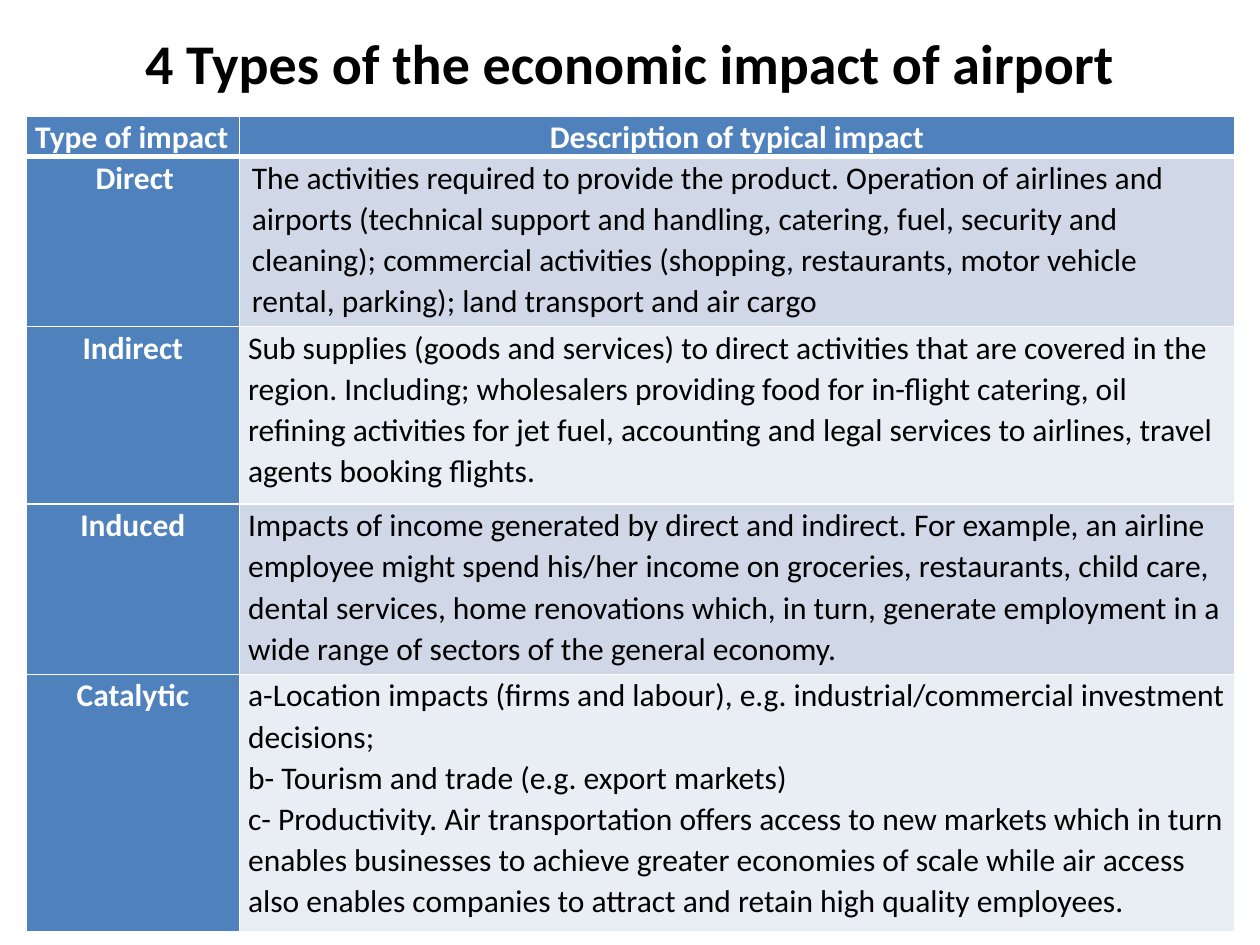
import pptx
import pptx.dml.color
import pptx.enum.text
import pptx.oxml
import pptx.oxml.ns
import pptx.util

Inches = pptx.util.Inches
Pt = pptx.util.Pt
ALIGN = pptx.enum.text.PP_ALIGN

# Content
TITLE = "4 Types of the economic impact of airport"
HEADER = ("Type of impact", "Description of typical impact")
IMPACTS = [
    ("Direct", [
        "The activities required to provide the product. Operation of airlines and airports "
        "(technical support and handling, catering, fuel, security and cleaning); commercial "
        "activities (shopping, restaurants, motor vehicle rental, parking); land transport "
        "and air cargo"]),
    ("Indirect", [
        "Sub supplies (goods and services) to direct activities that are covered in the region. "
        "Including; wholesalers providing food for in-flight catering, oil refining activities "
        "for jet fuel, accounting and legal services to airlines, travel agents booking flights."]),
    ("Induced", [
        "Impacts of income generated by direct and indirect. For example, an airline employee "
        "might spend his/her income on groceries, restaurants, child care, dental services, "
        "home renovations which, in turn, generate employment in a wide range of sectors of "
        "the general economy."]),
    ("Catalytic", [
        "a-Location impacts (firms and labour), e.g. industrial/commercial investment decisions;",
        "b- Tourism and trade (e.g. export markets)",
        "c- Productivity. Air transportation offers access to new markets which in turn enables "
        "businesses to achieve greater economies of scale while air access also enables "
        "companies to attract and retain high quality employees."]),
]

# Layout and look
COLUMN_WIDTHS = (1.69, 7.9)
ROW_HEIGHTS = (0.31, 1.35, 1.41, 1.35, 2.04)
THEME = {
    "font": "Calibri", "title_size": 32, "body_size": 18,
    "text": "000000", "light_text": "FFFFFF", "border": "FFFFFF",
    "accent": "4F81BD", "bands": ("D0D8E8", "E9EDF4"),
}


def color(name):
    return pptx.dml.color.RGBColor.from_string(name)


def add_span(para, text, size, ink, bold):
    span = para.add_run()
    span.text = text
    span.font.name = THEME["font"]
    span.font.size = Pt(size)
    span.font.bold = bold
    span.font.color.rgb = color(ink)


def set_borders(cell, bottom_width):
    properties = cell._tc.get_or_add_tcPr()
    sides = (("lnL", 1), ("lnR", 1), ("lnT", 1), ("lnB", bottom_width))
    for position, (side, width) in enumerate(sides):
        properties.insert(position, pptx.oxml.parse_xml(
            f'<a:{side} {pptx.oxml.ns.nsdecls("a")} w="{Pt(width)}"><a:solidFill>'
            f'<a:srgbClr val="{THEME["border"]}"/></a:solidFill></a:{side}>'))


def fill_cell(cell, texts, fill, ink, bold, align, space_after=10, indent=0, bottom_width=1):
    cell.margin_left = cell.margin_right = Inches(0.07)
    cell.margin_top = cell.margin_bottom = 0
    cell.fill.solid()
    cell.fill.fore_color.rgb = color(fill)
    set_borders(cell, bottom_width)
    for index, text in enumerate(texts):
        frame = cell.text_frame
        para = frame.add_paragraph() if index else frame.paragraphs[0]
        para.alignment = align
        para.line_spacing = 1.07
        para.space_after = Pt(space_after)
        if indent:
            para._p.get_or_add_pPr().set("marL", str(Inches(indent)))
        add_span(para, text, THEME["body_size"], ink, bold)


def add_title(page):
    box = page.shapes.add_textbox(Inches(0.5), Inches(0.08), Inches(9), Inches(0.83))
    frame = box.text_frame
    frame.word_wrap = True
    frame.vertical_anchor = pptx.enum.text.MSO_ANCHOR.MIDDLE
    para = frame.paragraphs[0]
    para.alignment = ALIGN.CENTER
    add_span(para, TITLE, THEME["title_size"], THEME["text"], True)


def add_impact_table(page):
    table = page.shapes.add_table(
        len(ROW_HEIGHTS), len(COLUMN_WIDTHS), Inches(0.21), Inches(0.92),
        Inches(sum(COLUMN_WIDTHS)), Inches(sum(ROW_HEIGHTS))).table
    for column, width in zip(table.columns, COLUMN_WIDTHS):
        column.width = Inches(width)
    for row, height in zip(table.rows, ROW_HEIGHTS):
        row.height = Inches(height)

    # Header row
    for index, (text, align) in enumerate(zip(HEADER, (ALIGN.LEFT, ALIGN.CENTER))):
        fill_cell(table.cell(0, index), [text], THEME["accent"], THEME["light_text"],
                  True, align, bottom_width=3)

    # One banded row per impact type
    for row, (name, texts) in enumerate(IMPACTS, start=1):
        indent = 0.03 if row == 1 else 0
        fill_cell(table.cell(row, 0), [name], THEME["accent"], THEME["light_text"],
                  True, ALIGN.CENTER, indent=indent)
        fill_cell(table.cell(row, 1), texts, THEME["bands"][(row - 1) % 2], THEME["text"],
                  False, ALIGN.LEFT, 10 if len(texts) == 1 else 0, indent)


def main():
    deck = pptx.Presentation()
    deck.slide_width, deck.slide_height = Inches(10), Inches(7.5)
    page = deck.slides.add_slide(deck.slide_layouts[6])
    add_title(page)
    add_impact_table(page)
    deck.save("out.pptx")


if __name__ == "__main__":
    main()
